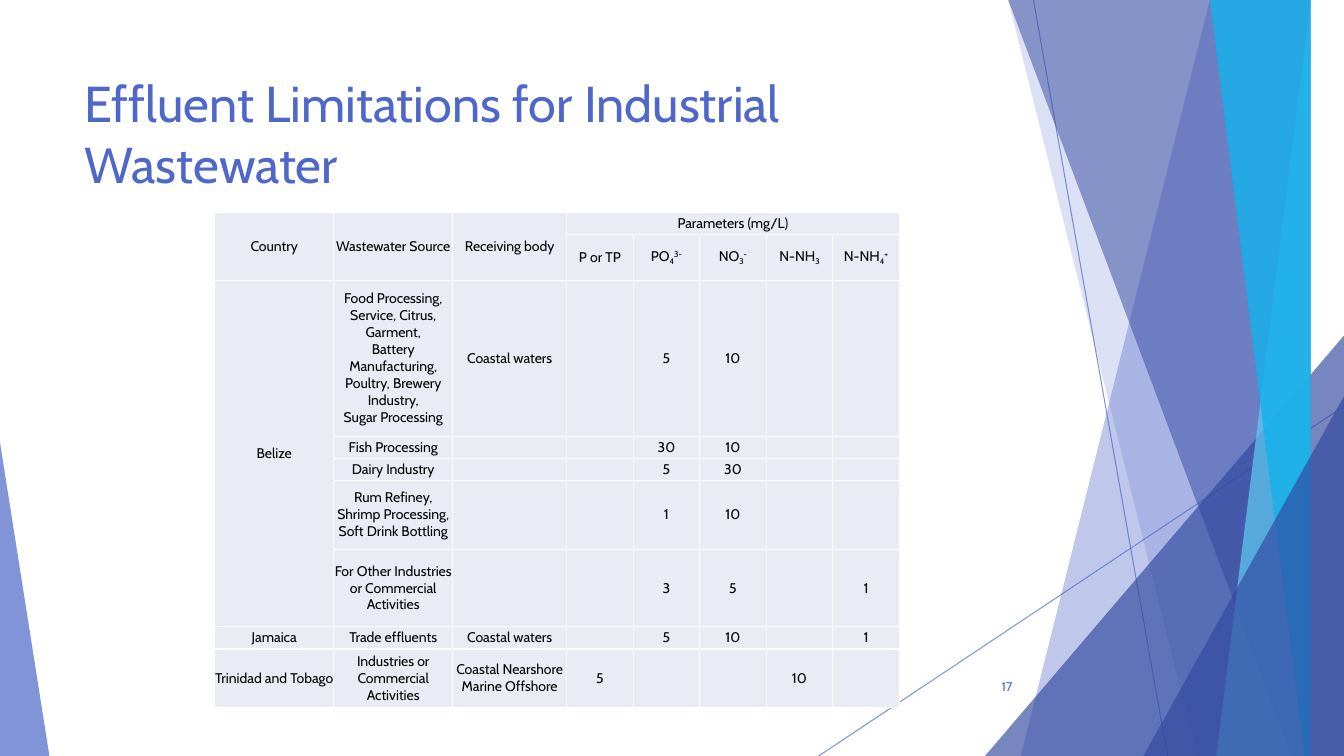
from lxml import etree
from pptx import Presentation, util as u
from pptx.dml.color import RGBColor
from pptx.enum import shapes, text
from pptx.oxml import ns

BLUE = RGBColor(0x4E, 0x67, 0xC8)
NAVY = RGBColor(0x31, 0x48, 0x9F)
SKY = RGBColor(0x5E, 0xCC, 0xF3)
CYAN = RGBColor(0x12, 0xB2, 0xEB)
PALE = RGBColor(0xE9, 0xEB, 0xF5)
WHITE = RGBColor(0xFF, 0xFF, 0xFF)
BLACK = RGBColor(0, 0, 0)

WIDE, HIGH, TOP = 13.33, 7.5, -0.01
SUB, SUP = -25000, 30000
CENTER, RIGHT = text.PP_ALIGN.CENTER, text.PP_ALIGN.RIGHT
MIDDLE = text.MSO_ANCHOR.MIDDLE


def node(parent, tag, **attrs):
    return etree.SubElement(parent, ns.qn(tag), attrs)


def style(item, values):
    for name, value in values.items():
        setattr(item, name, value)


class Deck:
    font = "Cabin"

    def __init__(self):
        self.prs = Presentation()
        style(self.prs, {"slide_width": u.Inches(WIDE), "slide_height": u.Inches(HIGH)})
        self.slide = self.prs.slides.add_slide(self.prs.slide_layouts[6])
        self.items = self.slide.shapes

    def fade(self, fill, alpha):
        color = fill._xPr.find(ns.qn("a:solidFill"))[0]
        node(color, "a:alpha", val=str(alpha * 1000))

    def paint(self, shape, color, alpha):
        shape.shadow.inherit = False
        shape.fill.solid()
        shape.fill.fore_color.rgb = color
        self.fade(shape.fill, alpha)
        shape.line.fill.background()

    def line(self, start, end):
        ends = [u.Inches(v) for v in start + end]
        rule = self.items.add_connector(shapes.MSO_CONNECTOR.STRAIGHT, *ends)
        rule.line.width = u.Pt(0.75)
        rule.line.color.rgb = BLUE
        self.fade(rule.line.fill, 70)
        node(rule._element.spPr, "a:effectLst")

    def panel(self, left, right, color, alpha):
        """Band from the sloped edge left-right out to the slide's right side."""
        form = self.items.build_freeform(left, TOP, scale=u.Inches(1))
        form.add_line_segments([(WIDE, TOP), (WIDE, HIGH), (right, HIGH)])
        self.paint(form.convert_to_shape(), color, alpha)

    def wedge(self, box, apex, color, alpha):
        kind = shapes.MSO_SHAPE.ISOSCELES_TRIANGLE
        shape = self.items.add_shape(kind, *[u.Inches(v) for v in box])
        shape.adjustments[0] = apex
        self.paint(shape, color, alpha)

    def words(self, para, runs, size, color):
        """Fill a paragraph with (text, baseline) pairs."""
        for value, base in runs:
            for i, part in enumerate(value.split("\n")):
                if i:
                    para.add_line_break()
                run = para.add_run()
                run.text = part
                style(run.font, {"name": self.font, "size": u.Pt(size)})
                run.font.color.rgb = color
                if base:
                    run.font._element.set("baseline", str(base))
        node(para._p, "a:endParaRPr", sz=str(size * 100))

    def label(self, box, value, size, align=None, **frame):
        body = self.items.add_textbox(*[u.Inches(v) for v in box]).text_frame
        style(body, {"word_wrap": True, **frame})
        body.paragraphs[0].alignment = align
        self.words(body.paragraphs[0], [(value, 0)], size, BLUE)

    def cell(self, cell, value):
        style(cell, {"vertical_anchor": MIDDLE, "margin_left": 0, "margin_right": 0,
                     "margin_top": 0, "margin_bottom": 0})
        for side in ("a:lnL", "a:lnR", "a:lnT", "a:lnB"):
            edge = node(cell._tc.get_or_add_tcPr(), side, w=str(u.Pt(1)))
            node(node(edge, "a:solidFill"), "a:srgbClr", val=str(WHITE))
        cell.fill.solid()
        cell.fill.fore_color.rgb = PALE
        para = cell.text_frame.paragraphs[0]
        para.alignment = CENTER
        runs = [(value, 0)] if isinstance(value, str) else value
        self.words(para, runs if value else [], 10, BLACK)

    def table(self, left, top, cols, rows, data, spans):
        size = [u.Inches(v) for v in (left, top, sum(cols), sum(rows))]
        grid = self.items.add_table(len(rows), len(cols), *size).table
        style(grid, {"first_row": False, "horz_banding": False})
        for col, width in zip(grid.columns, cols):
            col.width = u.Inches(width)
        for row, height, values in zip(grid.rows, rows, data):
            row.height = u.Inches(height)
            for cell, value in zip(row.cells, values):
                self.cell(cell, value)
        for first, last in spans:
            grid.cell(*first).merge(grid.cell(*last))


BACK = [(12.28, 10.04, BLUE, 36), (10.5, 11.83, BLUE, 20)]
FRONT = [(10.21, 12.91, NAVY, 50), (13.03, 11.92, SKY, 70), (11.96, 13.18, CYAN, 80)]

COLS = [1.18, 1.18, 1.13] + [0.66] * 5
ROWS = [0.22, 0.45, 1.55, 0.22, 0.22, 0.68, 0.77, 0.22, 0.58]
FOOD = ("Food Processing, Service, Citrus,\nGarment,\nBattery Manufacturing,\n"
        "Poultry, Brewery Industry,\nSugar Processing")
DATA = [
    ["Country", "Wastewater Source", "Receiving body", "Parameters (mg/L)", "", "", "", ""],
    ["", "", "", "P or TP",
     [("PO", 0), ("4", SUB), ("3-", SUP)],
     [("NO", 0), ("3", SUB), ("-", SUP)],
     [("N-NH", 0), ("3", SUB)],
     [("N-NH", 0), ("4", SUB), ("+", SUP)]],
    ["Belize", FOOD, "Coastal waters", "", "5", "10", "", ""],
    ["", "Fish Processing", "", "", "30", "10", "", ""],
    ["", "Dairy Industry", "", "", "5", "30", "", ""],
    ["", "Rum Refiney, Shrimp Processing, Soft Drink Bottling", "", "", "1", "10", "", ""],
    ["", "For Other Industries or Commercial Activities", "", "", "3", "5", "", "1"],
    ["Jamaica", "Trade effluents", "Coastal waters", "", "5", "10", "", "1"],
    ["Trinidad and Tobago", "Industries or Commercial Activities",
     "Coastal Nearshore\nMarine Offshore", "5", "", "", "10", ""],
]
SPANS = [((0, c), (1, c)) for c in range(3)] + [((0, 3), (0, 7)), ((2, 0), (6, 0))]


def main():
    deck = Deck()

    # Backdrop facets, back to front
    deck.line((10.25, 0), (11.58, HIGH))
    deck.line((WIDE, 4.03), (8.12, HIGH))
    for panel in BACK:
        deck.panel(*panel)
    deck.wedge((9.77, 3.33, 3.56, 4.17), 1, NAVY, 66)
    for panel in FRONT:
        deck.panel(*panel)
    deck.wedge((11.34, 3.93, 1.99, 3.57), 1, NAVY, 66)
    deck.wedge((0, 4.39, 0.49, 3.11), 0, BLUE, 70)

    # Title and page number
    deck.label((0.74, 0.67, 9.4, 1.44), "Effluent Limitations for Industrial Wastewater", 36)
    deck.label((9.39, 6.61, 0.75, 0.4), "17", 9, align=RIGHT, vertical_anchor=MIDDLE)

    # Limits by country
    deck.table(2.13, 2.11, COLS, ROWS, DATA, SPANS)

    deck.prs.save("out.pptx")


if __name__ == "__main__":
    main()
